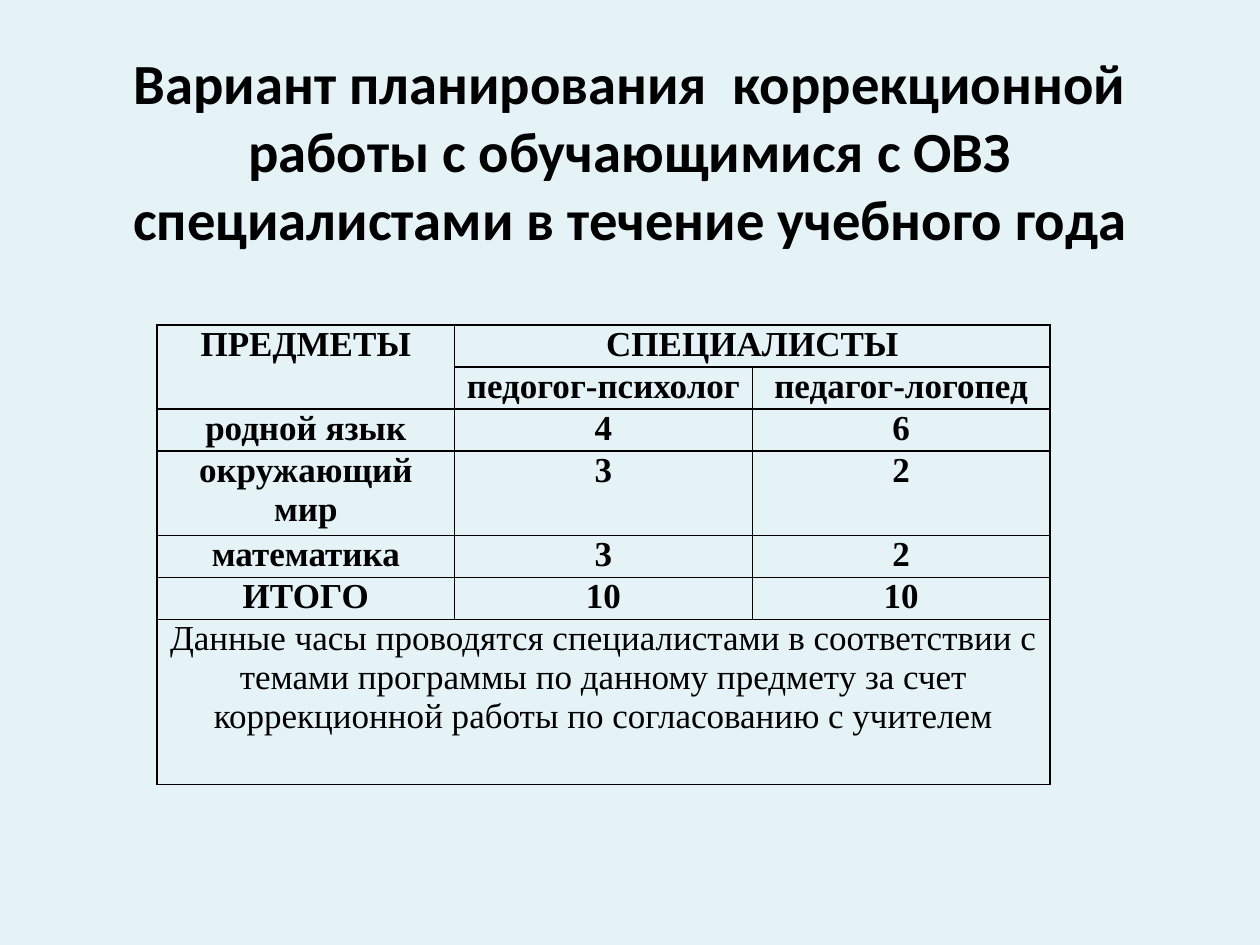
from dataclasses import dataclass

from lxml import etree
from pptx import Presentation
from pptx.dml.color import RGBColor
from pptx.enum.text import MSO_ANCHOR, PP_ALIGN
from pptx.oxml.ns import qn
from pptx.util import Pt

PX = 7257
CENTER = PP_ALIGN.CENTER
MIDDLE = MSO_ANCHOR.MIDDLE
BORDER_SIDES = ("a:lnL", "a:lnR", "a:lnT", "a:lnB")


@dataclass(frozen=True)
class Theme:
    """Colours, fonts and type sizes of the slide."""
    background: str = "E5F3F7"
    ink: str = "000000"
    title_font: str = "Calibri"
    title_size: float = 32.4
    table_font: str = "Times New Roman"
    table_size: float = 20
    border_width: float = 1


THEME = Theme()
TITLE = ("Вариант планирования  коррекционной работы с обучающимися с ОВЗ\v"
         "специалистами в течение учебного года")
HOURS = [
    ["ПРЕДМЕТЫ", "СПЕЦИАЛИСТЫ", ""],
    ["", "педогог-психолог", "педагог-логопед"],
    ["родной язык", "4", "6"],
    ["окружающий мир", "3", "2"],
    ["математика", "3", "2"],
    ["ИТОГО", "10", "10"],
    ["Данные часы проводятся специалистами в соответствии с темами программы "
     "по данному предмету за счет коррекционной работы по согласованию с учителем",
     "", ""],
]
ROW_HEIGHT = 39
MERGES = [((0, 0), (1, 0)), ((0, 1), (0, 2)), ((6, 0), (6, 2))]


def emu(*lengths):
    """Turn px lengths into EMU."""
    return [length * PX for length in lengths]


def style(paragraph, font_name, size, bold):
    """Centre a paragraph and set its font."""
    paragraph.alignment = CENTER
    font = paragraph.font
    font.name, font.size, font.bold = font_name, Pt(size), bold
    font.color.rgb = RGBColor.from_string(THEME.ink)


def add_borders(cell):
    """Draw a thin line on all four sides of a cell."""
    properties = cell._tc.get_or_add_tcPr()
    for position, side in enumerate(BORDER_SIDES):
        line = etree.Element(qn(side), w=str(Pt(THEME.border_width)))
        fill = etree.SubElement(line, qn("a:solidFill"))
        etree.SubElement(fill, qn("a:srgbClr"), val=THEME.ink)
        properties.insert(position, line)


def add_title(slide, left, top, width, height):
    """Place the heading, raised by a deep margin at the foot of its box."""
    frame = slide.shapes.add_textbox(*emu(left, top, width, height)).text_frame
    frame.word_wrap = True
    frame.vertical_anchor = MIDDLE
    frame.margin_bottom = 90 * PX
    frame.text = TITLE
    style(frame.paragraphs[0], THEME.title_font, THEME.title_size, True)


def add_hours_table(slide, left, top, width):
    """Place the table of hours per subject and specialist."""
    table = slide.shapes.add_table(
        len(HOURS), len(HOURS[0]),
        *emu(left, top, width, ROW_HEIGHT * len(HOURS))).table
    table.first_row = table.horz_banding = False
    for start, end in MERGES:
        table.cell(*start).merge(table.cell(*end))
    note_row = len(HOURS) - 1
    for r, texts in enumerate(HOURS):
        for c, text in enumerate(texts):
            cell = table.cell(r, c)
            cell.margin_left = cell.margin_right = 9 * PX
            cell.margin_top = 0
            cell.margin_bottom = ROW_HEIGHT * PX if r == note_row else 0
            cell.fill.background()
            add_borders(cell)
            cell.text = text
            style(cell.text_frame.paragraphs[0], THEME.table_font,
                  THEME.table_size, r != note_row)


def main():
    """Build and save the slide."""
    presentation = Presentation()
    presentation.slide_width, presentation.slide_height = emu(1260, 945)
    slide = presentation.slides.add_slide(presentation.slide_layouts[6])
    background = slide.background.fill
    background.solid()
    background.fore_color.rgb = RGBColor.from_string(THEME.background)
    add_title(slide, 63, 118, 1134, 147)
    add_hours_table(slide, 157, 325, 893)
    presentation.save("out.pptx")


if __name__ == "__main__":
    main()
